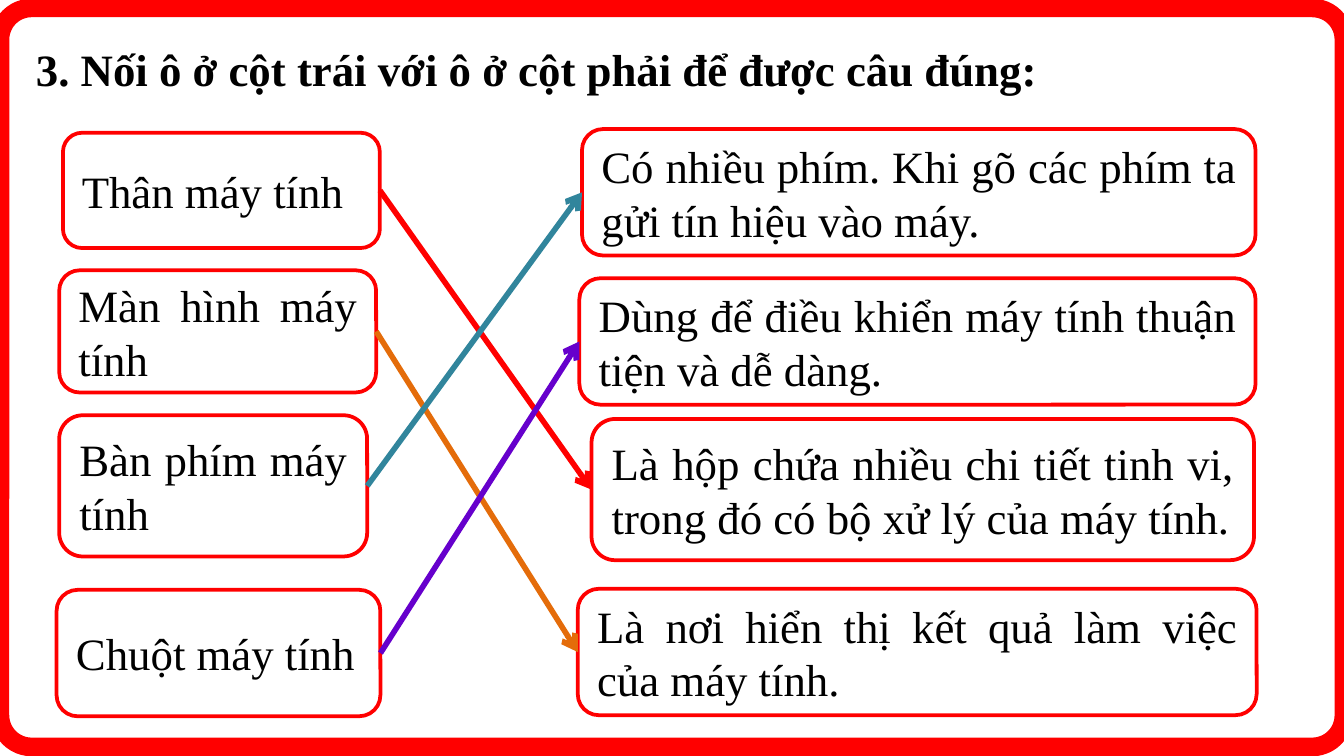
"""Build a matching exercise: four computer parts joined to their descriptions."""
from dataclasses import dataclass

from lxml.etree import SubElement as Sub
from pptx import Presentation
from pptx.dml.color import RGBColor as Rgb
from pptx.enum.shapes import MSO_CONNECTOR as Conn, MSO_SHAPE as Form
from pptx.enum.text import MSO_ANCHOR as Anchor, PP_ALIGN as Align
from pptx.oxml.ns import qn
from pptx.util import Cm, Pt


@dataclass(frozen=True)
class Theme:
    font: str = "Times New Roman"
    size: int = 24
    ink: str = "000000"
    paper: str = "FFFFFF"
    red: str = "FF0000"
    orange: str = "E46C0A"
    teal: str = "31859C"
    purple: str = "6600CC"
    thin: int = 2
    arrow: int = 3
    thick: int = 10


class Board:
    def __init__(self, slide, theme):
        self.slide = slide
        self.theme = theme

    def label(self, frame, text, bold=False):
        frame.word_wrap = True
        frame.text = text
        para = frame.paragraphs[0]
        font = para.runs[0].font
        font.name = self.theme.font
        font.size = Pt(self.theme.size)
        font.bold = bold
        font.color.rgb = Rgb.from_string(self.theme.ink)
        return para

    def stroke(self, line, color, width):
        line.color.rgb = Rgb.from_string(color)
        line.width = Pt(width)

    def panel(self, area, width):
        shape = self.slide.shapes.add_shape(Form.ROUNDED_RECTANGLE, *map(Cm, area))
        shape.shadow.inherit = False
        self.stroke(shape.line, self.theme.red, width)
        return shape

    def box(self, text, *area):
        shape = self.panel(area, self.theme.thin)
        shape.fill.solid()
        shape.fill.fore_color.rgb = Rgb.from_string(self.theme.paper)
        shape.text_frame.vertical_anchor = Anchor.MIDDLE
        self.label(shape.text_frame, text).alignment = Align.JUSTIFY
        return shape

    def border(self, *area):
        shape = self.panel(area, self.theme.thick)
        shape.fill.background()
        shape.adjustments[0] = 0.043

    def title(self, text, *area):
        box = self.slide.shapes.add_textbox(*map(Cm, area))
        self.label(box.text_frame, text, bold=True).line_spacing = 1.7

    def link(self, start, end, color):
        arrow = self.slide.shapes.add_connector(Conn.STRAIGHT, 0, 0, 0, 0)
        arrow.begin_connect(start, 3)
        arrow.end_connect(end, 1)
        self.stroke(arrow.line, color, self.theme.arrow)
        props = arrow.element.spPr
        Sub(props.find(qn("a:ln")), qn("a:tailEnd"), type="arrow")
        Sub(props, qn("a:effectLst"))


PARTS = [
    ("Thân máy tính", 1.19, 2.51, 5.99, 2.18),
    ("Màn hình máy tính", 1.12, 5.11, 5.99, 2.31),
    ("Bàn phím máy tính", 1.12, 7.85, 5.82, 2.67),
    ("Chuột máy tính", 1.07, 11.15, 6.12, 2.39),
]
ROLES = [
    ("Có nhiều phím. Khi gõ các phím ta gửi tín hiệu vào máy.", 11, 2.44, 12.73, 2.39),
    ("Dùng để điều khiển máy tính thuận tiện và dễ dàng.", 10.95, 5.26, 12.78, 2.39),
    ("Là hộp chứa nhiều chi tiết tinh vi, trong đó có bộ xử lý của máy tính.",
     11.18, 7.92, 12.52, 2.67),
    ("Là nơi hiển thị kết quả làm việc của máy tính.", 10.92, 11.13, 12.83, 2.39),
]


def main():
    deck = Presentation()
    deck.slide_width, deck.slide_height = Cm(25.4), Cm(14.29)
    theme = Theme()
    board = Board(deck.slides.add_slide(deck.slide_layouts[6]), theme)
    parts = [board.box(*part) for part in PARTS]
    roles = [board.box(*role) for role in ROLES]
    pairs = [(2, theme.red), (3, theme.orange), (0, theme.teal), (1, theme.purple)]
    for part, (role, color) in zip(parts, pairs):
        board.link(part, roles[role], color)
    board.title("3. Nối ô ở cột trái với ô ở cột phải để được câu đúng:", 0.43, -0.05, 23.65, 1.75)
    board.border(0, 0.15, 25.4, 13.97)
    deck.save("out.pptx")


if __name__ == "__main__":
    main()
